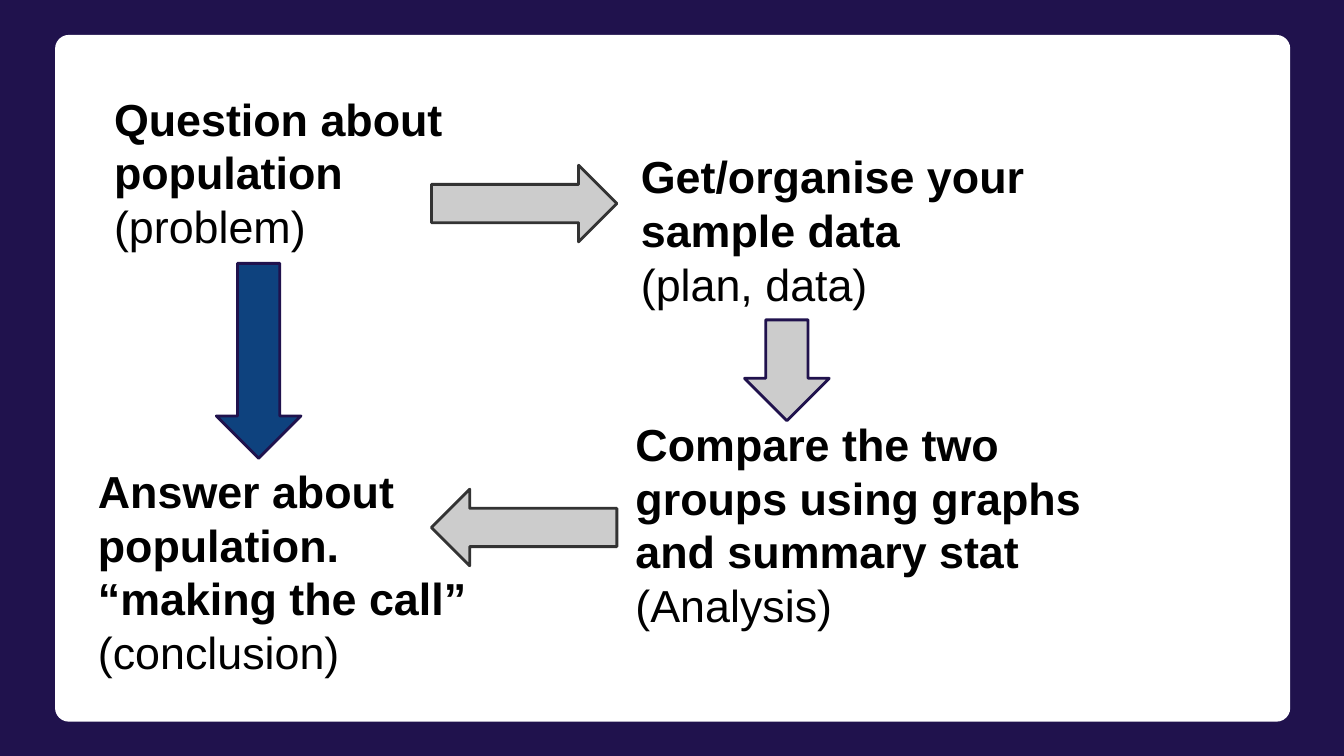
from typing import NamedTuple

from pptx import Presentation
from pptx.dml.color import RGBColor
from pptx.enum.shapes import MSO_SHAPE
from pptx.enum.text import MSO_ANCHOR, PP_ALIGN
from pptx.util import Inches, Pt

NAVY = RGBColor(0x20, 0x12, 0x4D)
BLUE = RGBColor(0x0E, 0x42, 0x7E)
GREY = RGBColor(0xCC, 0xCC, 0xCC)
DARK_GREY = RGBColor(0x33, 0x33, 0x33)
WHITE = RGBColor(0xFF, 0xFF, 0xFF)
BLACK = RGBColor(0x00, 0x00, 0x00)


class Box(NamedTuple):
    left: float
    top: float
    width: float
    height: float


class Step(NamedTuple):
    box: Box
    title: str
    stage: str
    new_paragraph: bool


class Arrow(NamedTuple):
    kind: MSO_SHAPE
    box: Box
    fill: RGBColor
    line: RGBColor


PANEL = Box(0.41, 0.26, 9.19, 5.11)

STEPS = [
    Step(Box(0.75, 0.58, 2.82, 0.95), "Question about population", "(problem)", False),
    Step(Box(0.63, 3.35, 3.01, 1.04), "Answer about population. “making the call”",
         "(conclusion)", True),
    Step(Box(4.67, 1.01, 3.15, 0.95), "Get/organise your sample data",
         "(plan, data)", True),
    Step(Box(4.63, 3, 3.59, 0.95),
         "Compare the two groups using graphs and summary stat", "(Analysis)", False),
]

ARROWS = [
    Arrow(MSO_SHAPE.DOWN_ARROW, Box(1.61, 1.96, 0.63, 1.45), BLUE, NAVY),
    Arrow(MSO_SHAPE.DOWN_ARROW, Box(5.54, 2.38, 0.63, 0.75), GREY, NAVY),
    Arrow(MSO_SHAPE.RIGHT_ARROW, Box(3.21, 1.23, 1.38, 0.57), GREY, DARK_GREY),
    Arrow(MSO_SHAPE.LEFT_ARROW, Box(3.21, 3.64, 1.38, 0.57), GREY, DARK_GREY),
]


def add_shape(s, kind: MSO_SHAPE, box: Box, fill: RGBColor, line: RGBColor | None = None):
    sp = s.shapes.add_shape(kind, *map(Inches, box))
    sp.shadow.inherit = False
    sp.fill.solid()
    sp.fill.fore_color.rgb = fill
    if line is None:
        sp.line.fill.background()
    else:
        sp.line.color.rgb = line
        sp.line.width = Pt(1.5)
    return sp


def add_run(p, text: str, *, size: float = 24, bold: bool = False,
            color: RGBColor = BLACK, font: str = "Arial") -> None:
    r = p.add_run()
    r.text = text
    r.font.size = Pt(size)
    r.font.bold = bold
    r.font.color.rgb = color
    r.font.name = font


def add_step(s, step: Step) -> None:
    """Write a bold title, with its stage after it or in a second paragraph."""
    tf = s.shapes.add_textbox(*map(Inches, step.box)).text_frame
    tf.word_wrap = True
    tf.vertical_anchor = MSO_ANCHOR.TOP
    tf.margin_left = tf.margin_right = tf.margin_top = tf.margin_bottom = Inches(0.1)
    p = tf.paragraphs[0]
    add_run(p, step.title, bold=True)
    if step.new_paragraph:
        add_run(tf.add_paragraph(), step.stage)
    else:
        add_run(p, f" {step.stage}")
    for p in tf.paragraphs:
        p.alignment = PP_ALIGN.LEFT
        p.line_spacing = Pt(28.8)


def main() -> None:
    prs = Presentation()
    prs.slide_width = Inches(10)
    prs.slide_height = prs.slide_width * 9 // 16
    s = prs.slides.add_slide(prs.slide_layouts[6])
    s.background.fill.solid()
    s.background.fill.fore_color.rgb = NAVY

    panel = add_shape(s, MSO_SHAPE.ROUNDED_RECTANGLE, PANEL, WHITE)
    panel.adjustments[0] = 0.02
    for step in STEPS[:2]:
        add_step(s, step)
    add_shape(s, *ARROWS[0])
    for step in STEPS[2:]:
        add_step(s, step)
    for arrow in ARROWS[1:]:
        add_shape(s, *arrow)

    prs.save("out.pptx")


if __name__ == "__main__":
    main()
